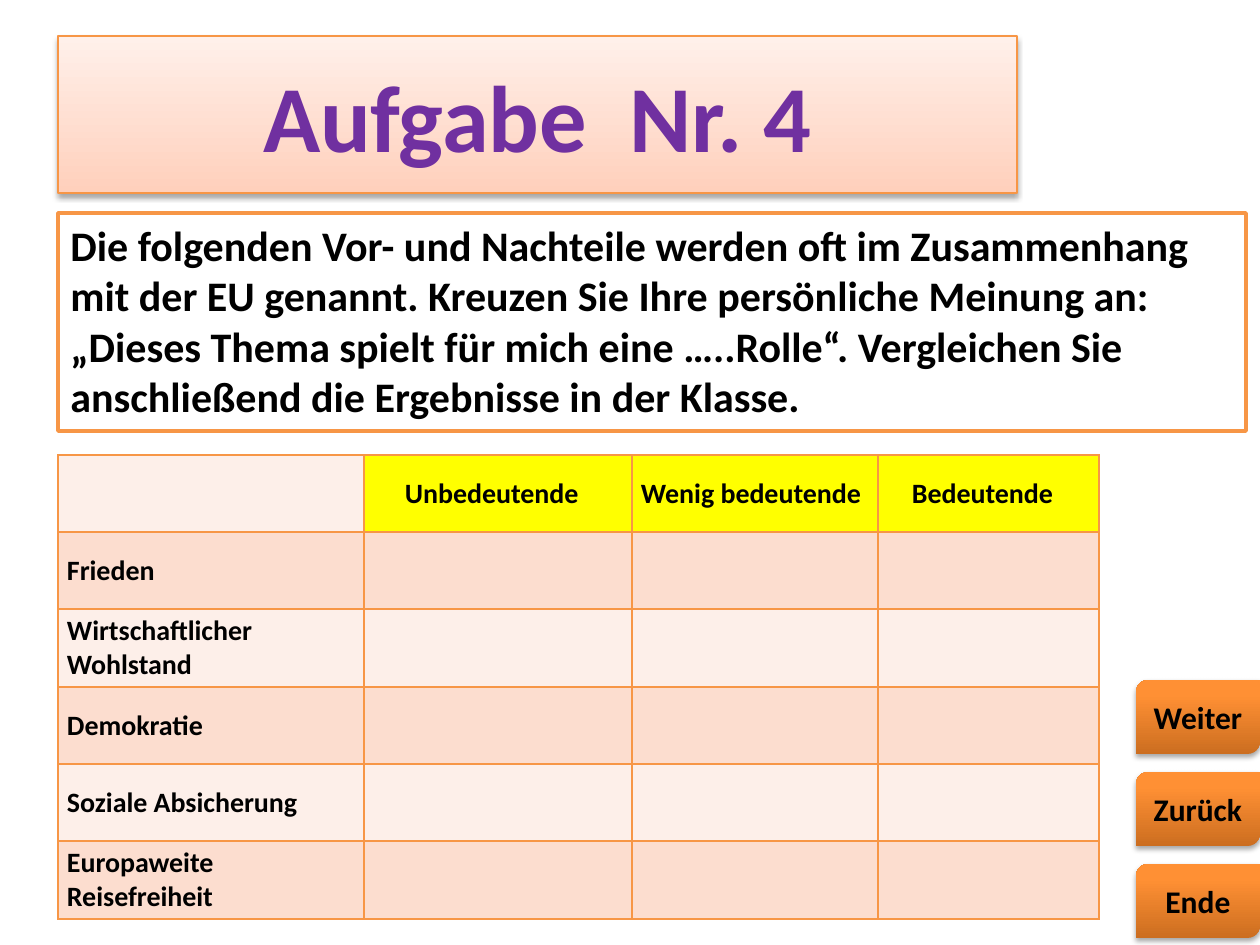
from lxml import etree
from pptx import Presentation
from pptx import util as u
from pptx.dml.color import RGBColor
from pptx.enum import shapes, text
from pptx.oxml import ns

FONT = "Calibri"
ORANGE = "F79646"
BLACK = "000000"
YELLOW = "FFFF00"
ROW_FILLS = ("FDEFE9", "FCDDCF")


def px(length):
    return u.Emu(round(length * 914400 / 126))


def color(value):
    return RGBColor.from_string(value)


def format_paragraph(paragraph, size, value=BLACK, align=text.PP_ALIGN.LEFT):
    paragraph.alignment = align
    font = paragraph.font
    font.name, font.size, font.bold = FONT, u.Pt(size), True
    font.color.rgb = color(value)


def add_gradient(shape, bottom, top, top_position=1):
    """Fill from the bottom colour up to the top colour."""
    shape.fill.gradient()
    shape.fill.gradient_angle = 90
    for stop, value, position in zip(shape.fill.gradient_stops, (bottom, top), (0, top_position)):
        stop.color.rgb = color(value)
        stop.position = position


def add_soft_shadow(shape):
    shape.shadow.inherit = False
    effects = shape._element.spPr.find(ns.qn("a:effectLst"))
    shadow = etree.SubElement(effects, ns.qn("a:outerShdw"), blurRad=str(u.Pt(3.1)),
                              dist=str(u.Pt(1.8)), dir="5400000", rotWithShape="0")
    shade = etree.SubElement(shadow, ns.qn("a:srgbClr"), val=BLACK)
    etree.SubElement(shade, ns.qn("a:alpha"), val="35000")


def add_title(slide, left, top, width, height):
    title = slide.shapes.title
    title.left, title.top, title.width, title.height = map(px, (left, top, width, height))
    add_gradient(title, "FFD0BC", "FFF0EA")
    title.line.color.rgb = color(ORANGE)
    title.line.width = u.Pt(0.75)
    add_soft_shadow(title)
    frame = title.text_frame
    frame.text = "Aufgabe  Nr. 4"
    frame.vertical_anchor = text.MSO_ANCHOR.MIDDLE
    format_paragraph(frame.paragraphs[0], 54, "7030A0", text.PP_ALIGN.CENTER)


def add_task(slide, left, top, width, height):
    box = slide.shapes.add_shape(shapes.MSO_SHAPE.RECTANGLE, *map(px, (left, top, width, height)))
    box.shadow.inherit = False
    box.fill.solid()
    box.fill.fore_color.rgb = color("FFFFFF")
    box.line.color.rgb = color(ORANGE)
    box.line.width = u.Pt(2)
    frame = box.text_frame
    frame.word_wrap = True
    frame.vertical_anchor = text.MSO_ANCHOR.TOP
    frame.text = ("Die folgenden Vor- und Nachteile werden oft im Zusammenhang mit der EU genannt. "
                  "Kreuzen Sie Ihre persönliche Meinung an: „Dieses Thema spielt für mich eine "
                  "…..Rolle“. Vergleichen Sie anschließend die Ergebnisse in der Klasse.")
    format_paragraph(frame.paragraphs[0], 24)


def add_borders(cell):
    properties = cell._tc.get_or_add_tcPr()
    for side in ("lnL", "lnR", "lnT", "lnB"):
        line = etree.SubElement(properties, ns.qn(f"a:{side}"), w=str(u.Pt(1)))
        fill = etree.SubElement(line, ns.qn("a:solidFill"))
        etree.SubElement(fill, ns.qn("a:srgbClr"), val=ORANGE)


def format_cell(cell, words, fill, indent=0):
    add_borders(cell)
    cell.fill.solid()
    cell.fill.fore_color.rgb = color(fill)
    cell.vertical_anchor = text.MSO_ANCHOR.MIDDLE
    cell.margin_left, cell.margin_right = px(9 + indent), px(9)
    cell.margin_top = cell.margin_bottom = 0
    cell.text = words
    format_paragraph(cell.text_frame.paragraphs[0], 16)


def add_opinion_table(slide, left, top):
    headings = (("", 0), ("Unbedeutende", 32), ("Wenig bedeutende", 0), ("Bedeutende", 25))
    topics = ("Frieden", "Wirtschaftlicher Wohlstand", "Demokratie",
              "Soziale Absicherung", "Europaweite Reisefreiheit")
    widths = (306, 268, 246, 221)
    heights = (77, 77, 78) * 2
    frame = slide.shapes.add_table(len(heights), len(widths),
                                   *map(px, (left, top, sum(widths), sum(heights))))
    table = frame.table
    table.first_row = table.horz_banding = False
    for column, width in zip(table.columns, widths):
        column.width = px(width)
    for row, height in zip(table.rows, heights):
        row.height = px(height)
    for index, (heading, indent) in enumerate(headings):
        format_cell(table.cell(0, index), heading, YELLOW if heading else ROW_FILLS[0], indent)
    for row, topic in enumerate(topics, 1):
        for column in range(len(widths)):
            format_cell(table.cell(row, column), "" if column else topic, ROW_FILLS[row % 2])


def add_navigation(slide, left, top, width, height, pitch):
    for index, label in enumerate(("Weiter", "Zurück", "Ende")):
        button = slide.shapes.add_shape(shapes.MSO_SHAPE.ROUND_2_DIAG_RECTANGLE, px(left),
                                        px(top + index * pitch), px(width), px(height))
        add_gradient(button, "CC6E20", "FF9034", 0.8)
        button.line.fill.background()
        add_soft_shadow(button)
        frame = button.text_frame
        frame.text = label
        frame.vertical_anchor = text.MSO_ANCHOR.MIDDLE
        format_paragraph(frame.paragraphs[0], 18, align=text.PP_ALIGN.CENTER)


def main():
    presentation = Presentation()
    presentation.slide_width, presentation.slide_height = px(1260), px(945)
    slide = presentation.slides.add_slide(presentation.slide_layouts[5])
    add_navigation(slide, 1136, 680, 124, 74, 92)
    add_title(slide, 58, 36, 959, 157)
    add_task(slide, 58, 213, 1188, 218)
    add_opinion_table(slide, 58, 455)
    presentation.save("out.pptx")


if __name__ == "__main__":
    main()
